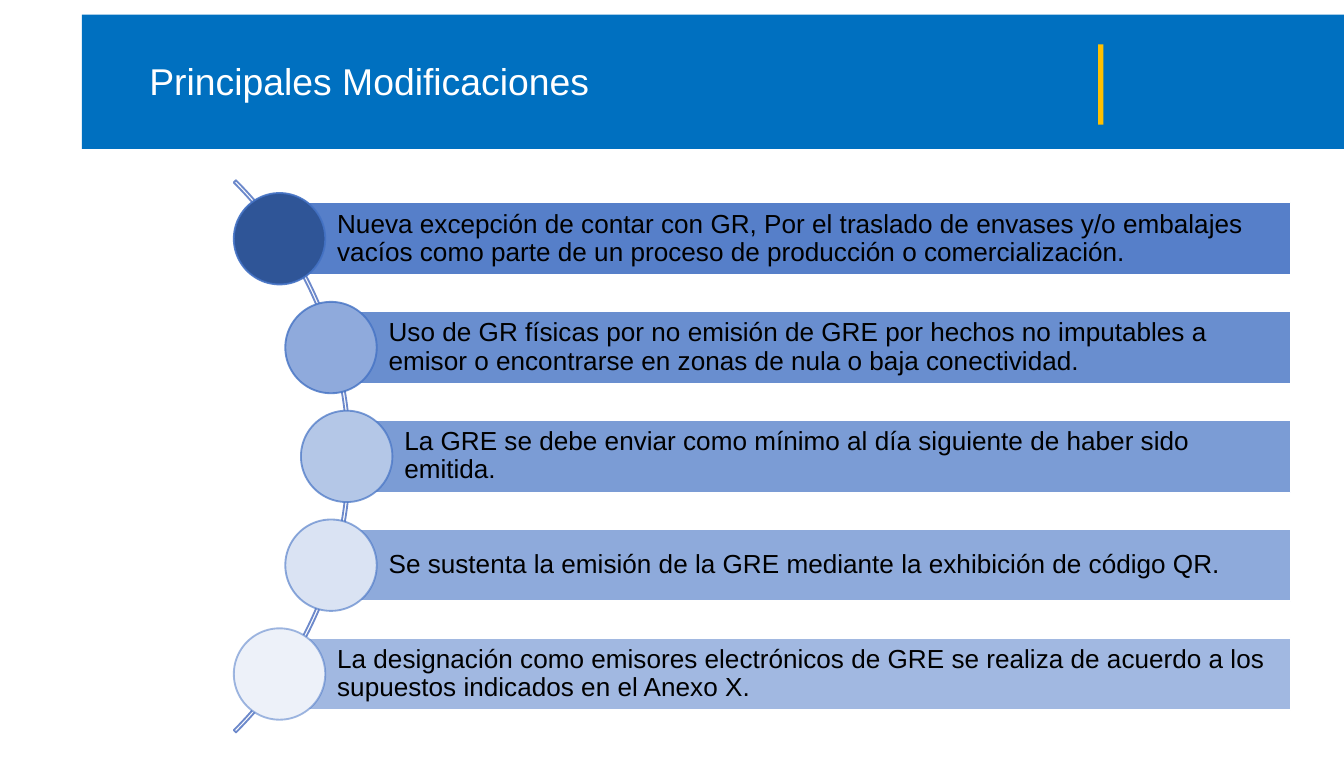
import math
from dataclasses import dataclass

import pptx
import pptx.dml.color
import pptx.enum.shapes
import pptx.enum.text
import pptx.oxml
import pptx.oxml.ns
import pptx.util

Cm = pptx.util.Cm
Pt = pptx.util.Pt
Shape = pptx.enum.shapes.MSO_SHAPE


@dataclass(frozen=True)
class Theme:
    font: str = "Arial"
    title_size: int = 20
    text_size: int = 14
    banner: str = "0070C0"
    accent: str = "FFC000"
    bar: str = "4472C4"
    arc: str = "6D89CB"
    light: str = "FFFFFF"
    dark: str = "000000"


theme = Theme()


def paint(color_format, color, opacity=100):
    color_format.solid()
    color_format.fore_color.rgb = pptx.dml.color.RGBColor.from_string(color)
    if opacity < 100:
        namespace = pptx.oxml.ns.nsdecls("a")
        alpha = pptx.oxml.parse_xml(f'<a:alpha {namespace} val="{opacity * 1000}"/>')
        color_format._xPr.find(".//" + pptx.oxml.ns.qn("a:srgbClr")).append(alpha)


def write(shape, text, size, color):
    frame = shape.text_frame
    frame.text = text
    frame.word_wrap = True
    frame.auto_size = pptx.enum.text.MSO_AUTO_SIZE.NONE
    frame.vertical_anchor = pptx.enum.text.MSO_ANCHOR.MIDDLE
    paragraph = frame.paragraphs[0]
    paragraph.alignment = pptx.enum.text.PP_ALIGN.LEFT
    paragraph.line_spacing = 0.9
    font = paragraph.runs[0].font
    font.name = theme.font
    font.size = Pt(size)
    font.color.rgb = pptx.dml.color.RGBColor.from_string(color)


presentation = pptx.Presentation()
presentation.slide_width = Cm(25.43)
presentation.slide_height = Cm(14.33)
slide = presentation.slides.add_slide(presentation.slide_layouts[5])
shapes = slide.shapes

heading = shapes.title
heading.left, heading.top, heading.width, heading.height = Cm(2.57), Cm(1.07), Cm(20.95), Cm(1.02)
write(heading, "Principales Modificaciones", theme.title_size, theme.light)

for left, top, width, height, color in [
    (1.55, 0.28, 23.88, 2.54, theme.banner),
    (20.78, 0.84, 0.1, 1.52, theme.accent),
]:
    block = shapes.add_shape(Shape.RECTANGLE, Cm(left), Cm(top), Cm(width), Cm(height))
    block.shadow.inherit = False
    paint(block.fill, color)
    block.line.fill.background()
    heading.element.addprevious(block.element)

center_x, center_y = -0.76, 8.64
arc_radius = 7.39
arc = shapes.add_shape(
    Shape.BLOCK_ARC, Cm(center_x - arc_radius), Cm(center_y - arc_radius),
    Cm(2 * arc_radius), Cm(2 * arc_radius),
)
arc.adjustments[0] = 189
arc.adjustments[1] = 27
arc.adjustments[2] = 0.004
arc.shadow.inherit = False
arc.fill.background()
paint(arc.line.fill, theme.arc)
arc.line.width = Pt(1)

changes = [
    ("Nueva excepción de contar con GR, Por el traslado de envases y/o embalajes vacíos como parte de un proceso de producción o comercialización.", "2F5597"),
    ("Uso de GR físicas por no emisión de GRE por hechos no imputables a emisor o encontrarse en zonas de nula o baja conectividad.", "8FAADC"),
    ("La GRE se debe enviar como mínimo al día siguiente de haber sido emitida.", "B4C7E7"),
    ("Se sustenta la emisión de la GRE mediante la exhibición de código QR.", "DAE3F3"),
    ("La designación como emisores electrónicos de GRE se realiza de acuerdo a los supuestos indicados en el Anexo X.", "EDF1F9"),
]
pitch, orbit = 2.06, 7.32
bar_right, bar_height, disc_size = 24.42, 1.37, 1.73

for index, (change, disc_color) in enumerate(changes):
    offset = (index - 2) * pitch
    x = center_x + math.sqrt(orbit**2 - offset**2)
    y = center_y + offset
    opacity = 90 - 10 * index

    bar = shapes.add_shape(
        Shape.RECTANGLE, Cm(x), Cm(y - bar_height / 2), Cm(bar_right - x), Cm(bar_height)
    )
    bar.shadow.inherit = False
    paint(bar.fill, theme.bar, opacity)
    paint(bar.line.fill, theme.light)
    bar.line.width = Pt(1)
    write(bar, change, theme.text_size, theme.dark)
    bar.text_frame.margin_left = Cm(1.09)
    bar.text_frame.margin_right = Cm(0.1)
    bar.text_frame.margin_top = Cm(0.1)
    bar.text_frame.margin_bottom = Cm(0.1)

    disc = shapes.add_shape(
        Shape.OVAL, Cm(x - disc_size / 2), Cm(y - disc_size / 2), Cm(disc_size), Cm(disc_size)
    )
    disc.shadow.inherit = False
    paint(disc.fill, disc_color)
    paint(disc.line.fill, theme.bar, opacity)
    disc.line.width = Pt(1)

presentation.save("out.pptx")
